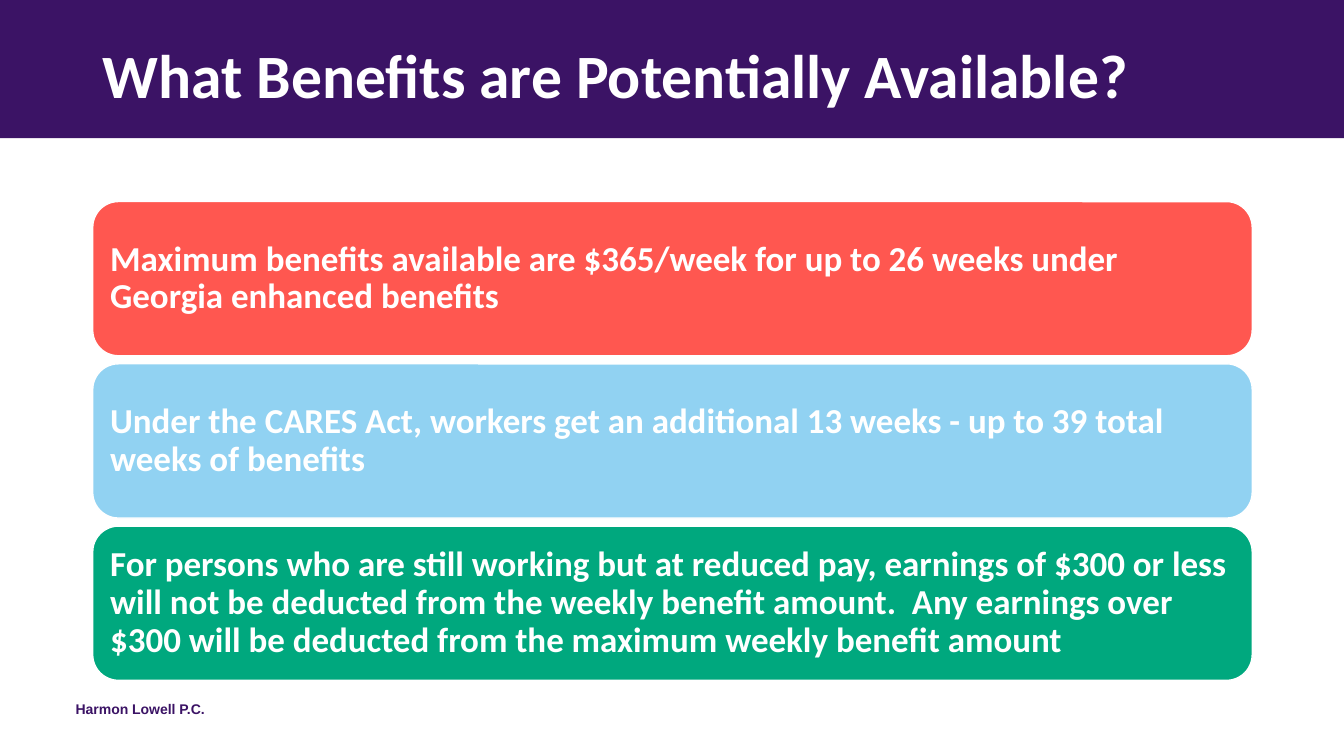
from dataclasses import dataclass

from pptx import Presentation
from pptx import util as u
from pptx.dml import color
from pptx.enum import shapes, text

PURPLE, WHITE = "3B1365", "FFFFFF"
LEFT, WIDTH = 0.92, 11.5
CARD_TOP, CARD_HEIGHT, CARD_PITCH = 2.0, 1.53, 1.61


@dataclass
class Card:
    fill: str
    wording: str


CARDS = [
    Card("FF5750", "Maximum benefits available are $365/week for up to 26 weeks "
                   "under Georgia enhanced benefits"),
    Card("91D2F2", "Under the CARES Act, workers get an additional 13 weeks - "
                   "up to 39 total weeks of benefits"),
    Card("00A87E", "For persons who are still working but at reduced pay, earnings "
                   "of $300 or less will not be deducted from the weekly benefit "
                   "amount.  Any earnings over $300 will be deducted from the "
                   "maximum weekly benefit amount"),
]


def rgb(value: str) -> color.RGBColor:
    return color.RGBColor.from_string(value)


def add_block(s, kind, left: float, top: float, width: float, height: float,
              fill: str):
    sp = s.shapes.add_shape(kind, u.Inches(left), u.Inches(top),
                            u.Inches(width), u.Inches(height))
    sp.shadow.inherit = False
    sp.fill.solid()
    sp.fill.fore_color.rgb = rgb(fill)
    sp.line.fill.background()
    return sp


def add_label(s, left: float, top: float, width: float, height: float):
    return s.shapes.add_textbox(u.Inches(left), u.Inches(top),
                                u.Inches(width), u.Inches(height))


def write(sp, wording: str, size: float, hue: str = WHITE, font: str = "Calibri",
          spacing: float = 0.9, anchor=text.MSO_ANCHOR.TOP,
          inset_x: float = 0.1, inset_y: float = 0.05) -> None:
    """Put one bold, left-aligned paragraph into a shape."""
    tf = sp.text_frame
    tf.word_wrap = True
    tf.vertical_anchor = anchor
    tf.margin_left = tf.margin_right = u.Inches(inset_x)
    tf.margin_top = tf.margin_bottom = u.Inches(inset_y)
    p = tf.paragraphs[0]
    p.text = wording
    p.alignment = text.PP_ALIGN.LEFT
    p.line_spacing = spacing
    r = p.runs[0]
    r.font.name = font
    r.font.size = u.Pt(size)
    r.font.bold = True
    r.font.color.rgb = rgb(hue)


def add_card(s, card: Card, top: float) -> None:
    sp = add_block(s, shapes.MSO_SHAPE.ROUNDED_RECTANGLE, LEFT, top,
                   WIDTH, CARD_HEIGHT, card.fill)
    sp.line.color.rgb = rgb(WHITE)
    sp.line.width = u.Pt(1)
    write(sp, card.wording, 25, anchor=text.MSO_ANCHOR.MIDDLE, inset_y=0.1)


def main() -> None:
    prs = Presentation()
    prs.slide_width, prs.slide_height = u.Inches(13.33), u.Inches(7.5)
    s = prs.slides.add_slide(prs.slide_layouts[6])

    add_block(s, shapes.MSO_SHAPE.RECTANGLE, 0, 0, 13.33, 1.37, PURPLE)
    title = add_label(s, LEFT, 0.4, WIDTH, 1.45)
    write(title, "What Benefits are Potentially Available?", 44)

    for i, card in enumerate(CARDS):
        add_card(s, card, CARD_TOP + i * CARD_PITCH)

    firm = add_label(s, 0.75, 6.95, 4.5, 0.4)
    write(firm, "Harmon Lowell P.C.", 10, PURPLE, "Arial", spacing=1.0,
          inset_x=0, inset_y=0)

    prs.save("out.pptx")


if __name__ == "__main__":
    main()
